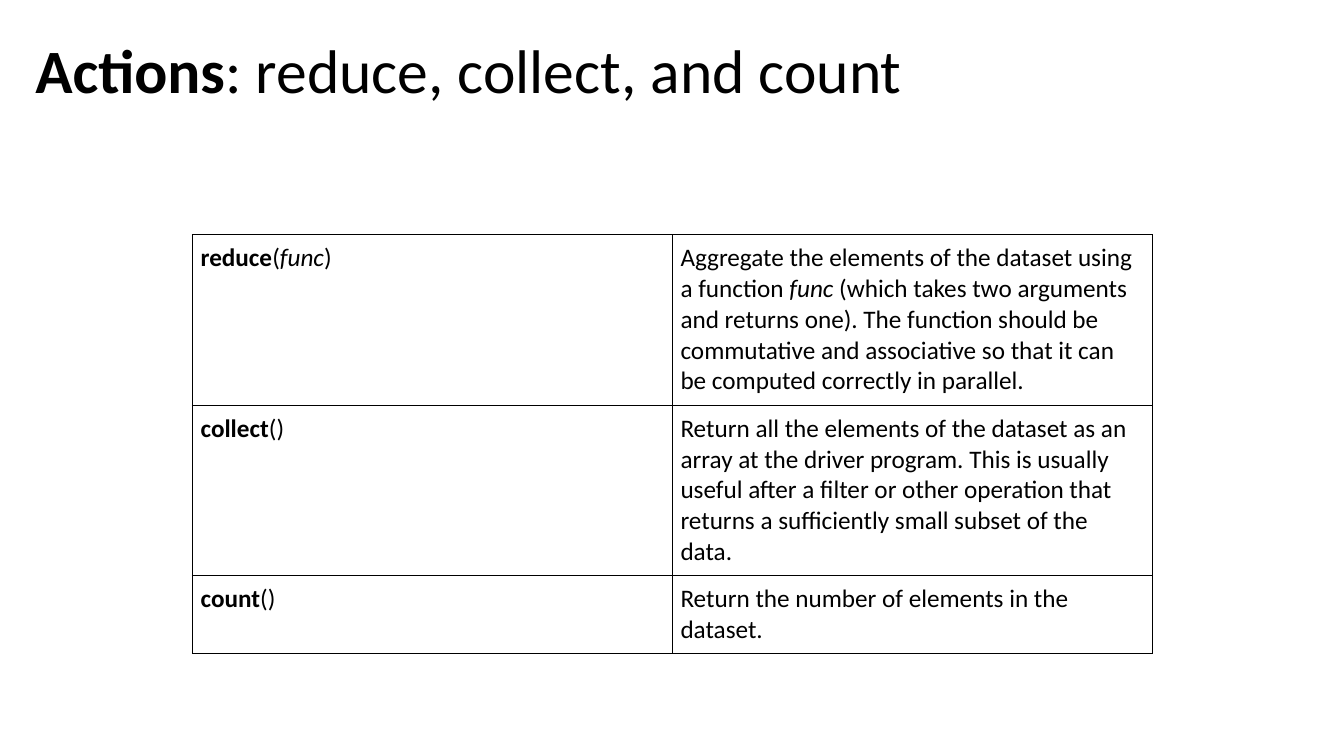
from dataclasses import dataclass

from lxml import etree
from pptx import Presentation
from pptx.dml.color import RGBColor
from pptx.enum.text import MSO_ANCHOR, MSO_AUTO_SIZE, PP_ALIGN
from pptx.oxml.ns import qn
from pptx.util import Pt

LEFT = PP_ALIGN.LEFT
TOP = MSO_ANCHOR.TOP
MIDDLE = MSO_ANCHOR.MIDDLE
NO_FIT = MSO_AUTO_SIZE.NONE

EMU_PER_PX = 9144  # 100 px to the inch
TITLE_ONLY = 5


@dataclass(frozen=True)
class Theme:
    font: str = "Calibri"
    ink: str = "000000"
    title_size: int = 44
    body_size: int = 18
    border_width: int = 1
    cell_margin: int = 8


THEME = Theme()

PLAIN = {"bold": False, "italic": False}
BOLD = {"bold": True, "italic": False}
ITALIC = {"bold": False, "italic": True}

TITLE = [("Actions", BOLD), (": reduce, collect, and count", PLAIN)]
ACTIONS = [
    (
        [("reduce", BOLD), ("(", PLAIN), ("func", ITALIC), (")", PLAIN)],
        [
            ("Aggregate the elements of the dataset using a function ", PLAIN),
            ("func", ITALIC),
            (" (which takes two arguments and returns one). The function should be "
             "commutative and associative so that it can be computed correctly "
             "in parallel.", PLAIN),
        ],
    ),
    (
        [("collect", BOLD), ("()", PLAIN)],
        [("Return all the elements of the dataset as an array at the driver program. "
          "This is usually useful after a filter or other operation that returns a "
          "sufficiently small subset of the data.", PLAIN)],
    ),
    (
        [("count", BOLD), ("()", PLAIN)],
        [("Return the number of elements in the dataset.", PLAIN)],
    ),
]
ROW_HEIGHTS = [169, 169, 77]
COLUMN_WIDTH = 476


def px(length):
    return length * EMU_PER_PX


def set_all(target, values):
    for name, value in values.items():
        setattr(target, name, value)


def write_runs(p, runs, size):
    p.alignment = LEFT
    for text, style in runs:
        r = p.add_run()
        r.text = text
        set_all(r.font, {"name": THEME.font, "size": Pt(size), **style})
        r.font.color.rgb = RGBColor.from_string(THEME.ink)


def add_title(s, runs):
    title = s.shapes.title
    set_all(title, {"left": px(25), "top": 0, "width": px(1278), "height": px(145)})
    tf = title.text_frame
    set_all(tf, {"word_wrap": True, "auto_size": NO_FIT, "vertical_anchor": MIDDLE})
    p = tf.paragraphs[0]
    p.line_spacing = 0.9
    write_runs(p, runs, THEME.title_size)


def add_borders(cell):
    """Draw all four cell edges; they must precede the fill in the XML."""
    tc_pr = cell._tc.get_or_add_tcPr()
    for position, edge in enumerate(("a:lnL", "a:lnR", "a:lnT", "a:lnB")):
        ln = etree.Element(qn(edge), w=str(Pt(THEME.border_width)))
        fill = etree.SubElement(ln, qn("a:solidFill"))
        etree.SubElement(fill, qn("a:srgbClr"), val=THEME.ink)
        tc_pr.insert(position, ln)


def fill_cell(cell, runs):
    margin = px(THEME.cell_margin)
    sides = ("left", "right", "top", "bottom")
    set_all(cell, {f"margin_{side}": margin for side in sides})
    cell.vertical_anchor = TOP
    cell.fill.background()
    add_borders(cell)
    write_runs(cell.text_frame.paragraphs[0], runs, THEME.body_size)


def add_action_table(s, actions):
    columns = len(actions[0])
    frame = s.shapes.add_table(
        len(actions), columns, px(191), px(233),
        px(COLUMN_WIDTH * columns), px(sum(ROW_HEIGHTS)),
    )
    table = frame.table
    set_all(table, {"first_row": False, "horz_banding": False})
    for column in table.columns:
        column.width = px(COLUMN_WIDTH)
    for row, height, contents in zip(table.rows, ROW_HEIGHTS, actions):
        row.height = px(height)
        for cell, runs in zip(row.cells, contents):
            fill_cell(cell, runs)


def main():
    prs = Presentation()
    set_all(prs, {"slide_width": px(1333), "slide_height": px(750)})
    s = prs.slides.add_slide(prs.slide_layouts[TITLE_ONLY])
    add_title(s, TITLE)
    add_action_table(s, ACTIONS)
    prs.save("out.pptx")


if __name__ == "__main__":
    main()
